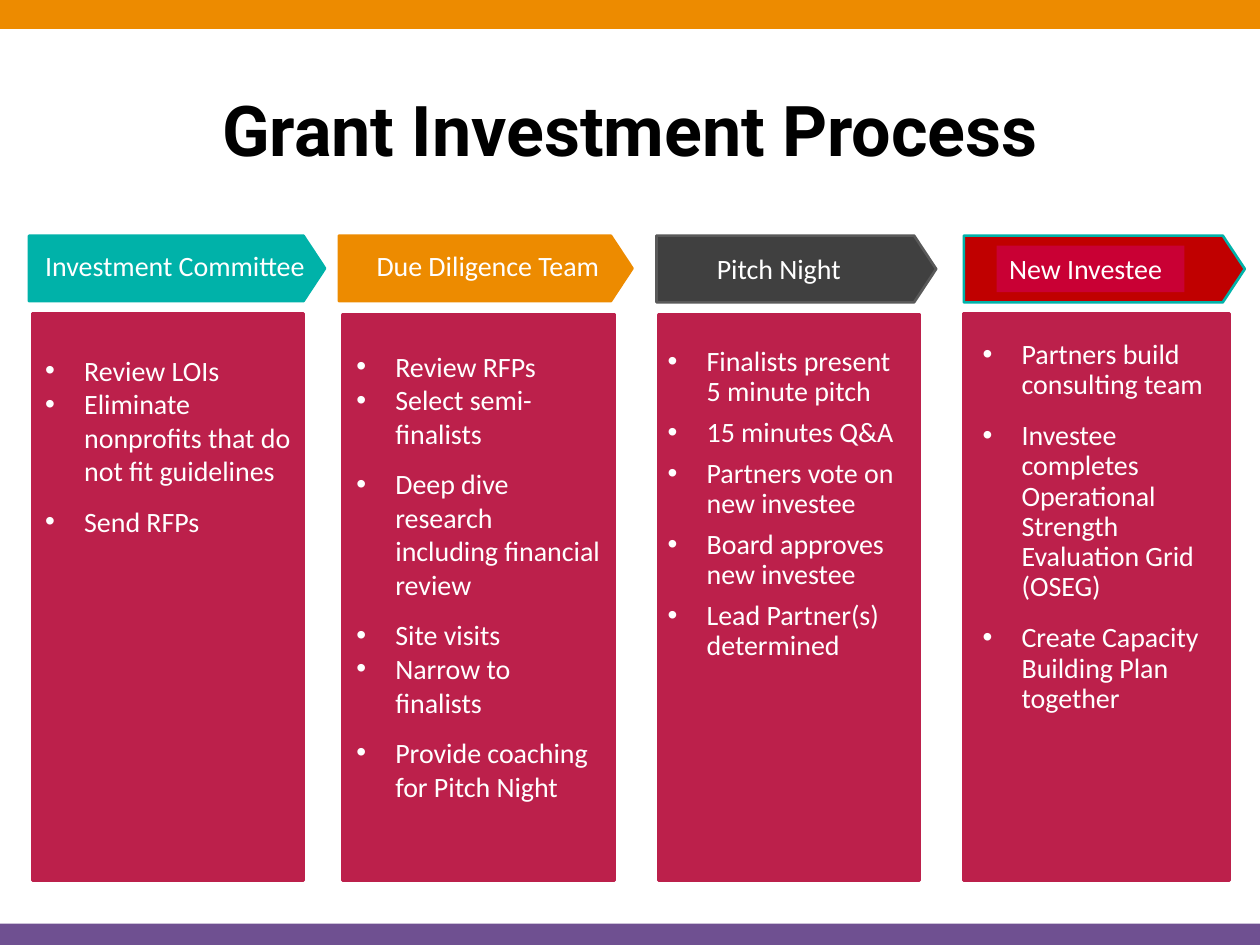
from lxml.etree import SubElement
from pptx import Presentation
from pptx.dml.color import RGBColor
from pptx.enum.shapes import MSO_SHAPE
from pptx.enum.text import MSO_ANCHOR, PP_ALIGN
from pptx.oxml.ns import qn
from pptx.util import Inches, Pt

WHITE = RGBColor(0xFF, 0xFF, 0xFF)
BLACK = RGBColor(0x00, 0x00, 0x00)
ORANGE = RGBColor(0xED, 0x8B, 0x00)
PURPLE = RGBColor(0x6F, 0x50, 0x91)
CRIMSON = RGBColor(0xBC, 0x20, 0x4B)
TEAL = RGBColor(0x00, 0xB2, 0xA9)
CHARCOAL = RGBColor(0x40, 0x40, 0x40)
GRAY = RGBColor(0x59, 0x59, 0x59)
RED = RGBColor(0xC0, 0x00, 0x00)
ROSE = RGBColor(0xC9, 0x00, 0x34)

WIDTH, HEIGHT = 10, 7.5
ARROW_TOP = 1.87
PANEL_BOTTOM = 6.99
INDENT = 0.31
BANDS = [(0, 0.23, ORANGE), (7.33, 0.17, PURPLE)]
TITLE = "Grant Investment Process"

STAGES = [
    dict(
        arrow=(0.23, 2.35, 0.52, TEAL, TEAL),
        label=("Investment Committee", 0.26, 1.92, 2.32, None),
        panel=(0.26, 2.49, 2.15),
        body=(0.26, 2.62, 2.15, 1.99),
        items=[
            ("Review LOIs", 1.5, 0),
            ("Eliminate nonprofits that do not fit guidelines", 1, 0),
            ("Send RFPs", 1.5, 0),
        ],
    ),
    dict(
        arrow=(2.69, 2.33, 0.52, ORANGE, ORANGE),
        label=("Due Diligence Team", 2.89, 1.92, 2.24, None),
        panel=(2.72, 2.5, 2.16),
        body=(2.73, 2.59, 2.14, 3.97),
        items=[
            ("Review RFPs", 1.5, 0),
            ("Select semi-finalists", 1, 9.6),
            ("Deep dive research including financial review", 1, 0),
            ("Site visits", 1.5, 0),
            ("Narrow to finalists", 1, 9.6),
            ("Provide coaching for Pitch Night", 1, 0),
        ],
    ),
    dict(
        arrow=(5.21, 2.22, 0.53, CHARCOAL, GRAY),
        label=("Pitch Night", 5.59, 1.95, 1.65, CHARCOAL),
        panel=(5.23, 2.5, 2.07),
        body=(5.2, 2.71, 2.05, 3.06),
        items=[
            ("Finalists present 5 minute pitch", 0.9, 6),
            ("15 minutes Q&A", 0.9, 6),
            ("Partners vote on new investee", 0.9, 6),
            ("Board approves new investee", 0.9, 6),
            ("Lead Partner(s) determined", 0.9, 12),
        ],
    ),
    dict(
        arrow=(7.65, 2.23, 0.53, RED, TEAL),
        label=("New Investee", 7.91, 1.95, 1.49, ROSE),
        panel=(7.65, 2.49, 2.11),
        body=(7.7, 2.65, 1.97, 3.54),
        items=[
            ("Partners build consulting team", 0.9, 12),
            ("Investee completes Operational Strength Evaluation Grid (OSEG)", 0.9, 12),
            ("Create Capacity Building Plan together", 0.9, 12),
        ],
    ),
]


def add_box(slide, kind, box, fill, line=None, line_width=1.5):
    shape = slide.shapes.add_shape(kind, *map(Inches, box))
    shape.shadow.inherit = False
    shape.fill.solid()
    shape.fill.fore_color.rgb = fill
    if line is None:
        shape.line.fill.background()
    else:
        shape.line.color.rgb = line
        shape.line.width = Pt(line_width)
    return shape


def format_run(run, name="Calibri", size=16, color=WHITE, bold=False):
    for key, value in dict(name=name, size=Pt(size), bold=bold).items():
        setattr(run.font, key, value)
    run.font.color.rgb = color


def add_text(slide, box, items, bulleted=False, fill=None):
    shape = slide.shapes.add_textbox(*map(Inches, box))
    if fill is not None:
        shape.fill.solid()
        shape.fill.fore_color.rgb = fill
    frame = shape.text_frame
    frame.word_wrap = True
    for index, (text, spacing, after) in enumerate(items):
        paragraph = frame.add_paragraph() if index else frame.paragraphs[0]
        formats = dict(line_spacing=spacing, space_after=Pt(after), alignment=PP_ALIGN.LEFT)
        for key, value in formats.items():
            setattr(paragraph, key, value)
        run = paragraph.add_run()
        run.text = text
        format_run(run)
        if bulleted:
            properties = paragraph._p.get_or_add_pPr()
            properties.set("marL", str(Inches(INDENT)))
            properties.set("indent", str(-Inches(INDENT)))
            SubElement(properties, qn("a:buFont"), typeface="Arial")
            SubElement(properties, qn("a:buChar"), char="•")


def add_title(slide):
    title = slide.shapes.title
    for key, value in dict(left=0.5, top=0.3, width=9, height=1.31).items():
        setattr(title, key, Inches(value))
    title.text_frame.vertical_anchor = MSO_ANCHOR.MIDDLE
    paragraph = title.text_frame.paragraphs[0]
    paragraph.alignment = PP_ALIGN.CENTER
    paragraph.line_spacing = 1.2
    run = paragraph.add_run()
    run.text = TITLE
    format_run(run, "Roboto", 40, BLACK, True)


def add_stage(slide, stage):
    left, top, width = stage["panel"]
    panel = (left, top, width, PANEL_BOTTOM - top)
    add_box(slide, MSO_SHAPE.RECTANGLE, panel, CRIMSON, CRIMSON, 1.75)
    add_text(slide, stage["body"], stage["items"], bulleted=True)

    left, width, height, fill, line = stage["arrow"]
    arrow = add_box(slide, MSO_SHAPE.PENTAGON, (left, ARROW_TOP, width, height), fill, line)
    arrow.adjustments[0] = 0.33
    text, left, top, width, fill = stage["label"]
    add_text(slide, (left, top, width, 0.37), [(text, 1, 0)], fill=fill)


def main():
    presentation = Presentation()
    presentation.slide_width = Inches(WIDTH)
    presentation.slide_height = Inches(HEIGHT)
    slide = presentation.slides.add_slide(presentation.slide_layouts[5])
    add_title(slide)
    for top, height, color in BANDS:
        add_box(slide, MSO_SHAPE.RECTANGLE, (0, top, WIDTH, height), color)
    for stage in STAGES:
        add_stage(slide, stage)
    presentation.save("out.pptx")


if __name__ == "__main__":
    main()
